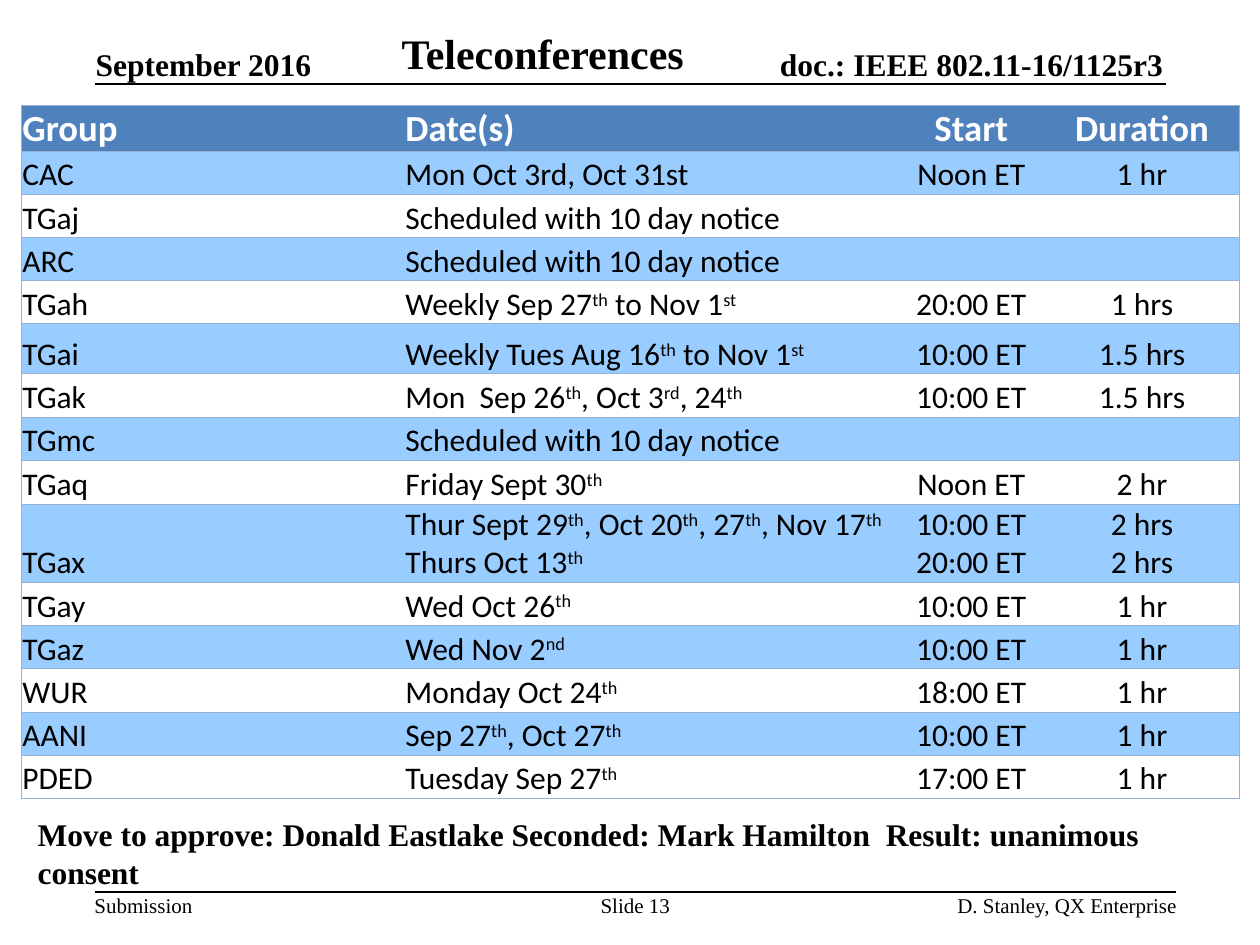
import pptx
import pptx.util
import pptx.dml.color
import pptx.enum.shapes
import pptx.enum.text
import pptx.oxml.ns
import lxml.etree
from dataclasses import dataclass

Pt = pptx.util.Pt
RGB = pptx.dml.color.RGBColor.from_string
ALIGN = pptx.enum.text.PP_ALIGN
ANCHOR = pptx.enum.text.MSO_ANCHOR
qn = pptx.oxml.ns.qn


@dataclass
class Theme:
    black: str = "000000"
    white: str = "FFFFFF"
    head_fill: str = "4F81BD"
    band_fill: str = "99CCFF"
    border: str = "95B3D7"
    serif: str = "Times New Roman"
    sans: str = "Calibri"
    title: int = 24
    head: int = 21
    body: int = 18
    footer: int = 12


theme = Theme()


def style(p, font, size, color, bold, align):
    p.alignment = align
    p.font.name = font
    p.font.size = Pt(size)
    p.font.bold = bold
    p.font.color.rgb = RGB(color)


def set_border(cell, side, visible):
    ln = lxml.etree.SubElement(cell._tc.get_or_add_tcPr(), qn("a:ln" + side), w=str(Pt(0.5)))
    if visible:
        fill = lxml.etree.SubElement(ln, qn("a:solidFill"))
        lxml.etree.SubElement(fill, qn("a:srgbClr"), val=theme.border)
    else:
        lxml.etree.SubElement(ln, qn("a:noFill"))


prs = pptx.Presentation()
prs.slide_width, prs.slide_height = Pt(720), Pt(540)
s = prs.slides.add_slide(prs.slide_layouts[6])

for y, right in ((48, 666), (509.8, 672)):
    line = s.shapes.add_connector(
        pptx.enum.shapes.MSO_CONNECTOR.STRAIGHT, Pt(54), Pt(y), Pt(right), Pt(y))
    line.line.color.rgb = RGB(theme.black)
    line.line.width = Pt(1)
    lxml.etree.SubElement(line._element.spPr, qn("a:effectLst"))

rows = [
    ("Group", "Date(s)", "Start", "Duration"),
    ("CAC", "Mon Oct 3rd, Oct 31st", "Noon ET", "1 hr"),
    ("TGaj", "Scheduled with 10 day notice", "", ""),
    ("ARC", "Scheduled with 10 day notice", "", ""),
    ("TGah", "Weekly Sep 27^th^ to Nov 1^st", "20:00 ET", "1 hrs"),
    ("TGai", "Weekly Tues Aug 16^th^ to Nov 1^st", "10:00 ET", "1.5 hrs"),
    ("TGak", "Mon  Sep 26^th^, Oct 3^rd^, 24^th", "10:00 ET", "1.5 hrs"),
    ("TGmc", "Scheduled with 10 day notice", "", ""),
    ("TGaq", "Friday Sept 30^th", "Noon ET", "2 hr"),
    ("TGax", "Thur Sept 29^th^, Oct 20^th^, 27^th^, Nov 17^th\nThurs Oct 13^th",
     "10:00 ET\n20:00 ET", "2 hrs\n2 hrs"),
    ("TGay", "Wed Oct 26^th", "10:00 ET", "1 hr"),
    ("TGaz", "Wed Nov 2^nd", "10:00 ET", "1 hr"),
    ("WUR", "Monday Oct 24^th", "18:00 ET", "1 hr"),
    ("AANI", "Sep 27^th^, Oct 27^th", "10:00 ET", "1 hr"),
    ("PDED", "Tuesday Sep 27^th", "17:00 ET", "1 hr"),
]
col_widths = (218.9, 282.2, 83.5, 111.6)
special_heights = {"Group": 25.7, "TGai": 28.6, "TGaq": 25.2, "TGax": 44}
row_heights = [special_heights.get(row[0], 24.7) for row in rows]

table = s.shapes.add_table(len(rows), len(col_widths), Pt(12.2), Pt(60),
                           Pt(sum(col_widths)), Pt(sum(row_heights))).table
table.first_row = table.horz_banding = False
for col, width in zip(table.columns, col_widths):
    col.width = Pt(width)

for i, row in enumerate(rows):
    table.rows[i].height = Pt(row_heights[i])
    header = i == 0
    fill = theme.head_fill if header else theme.band_fill if i % 2 else theme.white
    for j, text in enumerate(row):
        cell = table.cell(i, j)
        for side, visible in (("L", j == 0), ("R", j == len(row) - 1), ("T", True), ("B", True)):
            set_border(cell, side, visible)
        cell.fill.solid()
        cell.fill.fore_color.rgb = RGB(fill)
        cell.vertical_anchor = ANCHOR.BOTTOM
        cell.margin_left = cell.margin_right = cell.margin_top = Pt(0.6)
        cell.margin_bottom = Pt(0)
        tf = cell.text_frame
        for k, entry in enumerate(text.split("\n")):
            p = tf.add_paragraph() if k else tf.paragraphs[0]
            style(p, theme.sans, theme.head if header else theme.body,
                  theme.white if header else theme.black, header,
                  ALIGN.CENTER if j > 1 else ALIGN.LEFT)
            for n, part in enumerate(entry.split("^")):
                if part:
                    r = p.add_run()
                    r.text = part
                    if n % 2:
                        r._r.get_or_add_rPr().set("baseline", "30000")

labels = [
    ("September 2016", 54.7, 26, 150, 21.6, theme.body, True, ALIGN.LEFT, ANCHOR.BOTTOM, 0),
    ("doc.: IEEE 802.11-16/1125r3", 365.8, 26, 298.8, 21.6, theme.body, True,
     ALIGN.RIGHT, ANCHOR.BOTTOM, 0),
    ("Teleconferences", 222.5, 12.2, 177.1, 36, theme.title, True, ALIGN.LEFT, ANCHOR.TOP, 7.2),
    ("Move to approve: Donald Eastlake Seconded: Mark Hamilton  Result: unanimous consent",
     14.4, 462.2, 681.1, 51.1, theme.body, True, ALIGN.LEFT, ANCHOR.TOP, 7.2),
    ("Submission", 54, 509.8, 100, 14.4, theme.footer, False, ALIGN.LEFT, ANCHOR.TOP, 0),
    ("Slide 13", 313, 509.8, 100, 14.4, theme.footer, False, ALIGN.CENTER, ANCHOR.TOP, 0),
    ("D. Stanley, QX Enterprise", 472.5, 509.8, 200, 14.4, theme.footer, False,
     ALIGN.RIGHT, ANCHOR.TOP, 0),
]
for text, x, y, w, h, size, bold, align, anchor, inset in labels:
    tf = s.shapes.add_textbox(Pt(x), Pt(y), Pt(w), Pt(h)).text_frame
    tf.word_wrap = True
    tf.vertical_anchor = anchor
    tf.margin_left = tf.margin_right = Pt(inset)
    tf.margin_top = tf.margin_bottom = Pt(inset / 2)
    p = tf.paragraphs[0]
    p.text = text
    style(p, theme.serif, size, theme.black, bold, align)

prs.save("out.pptx")
